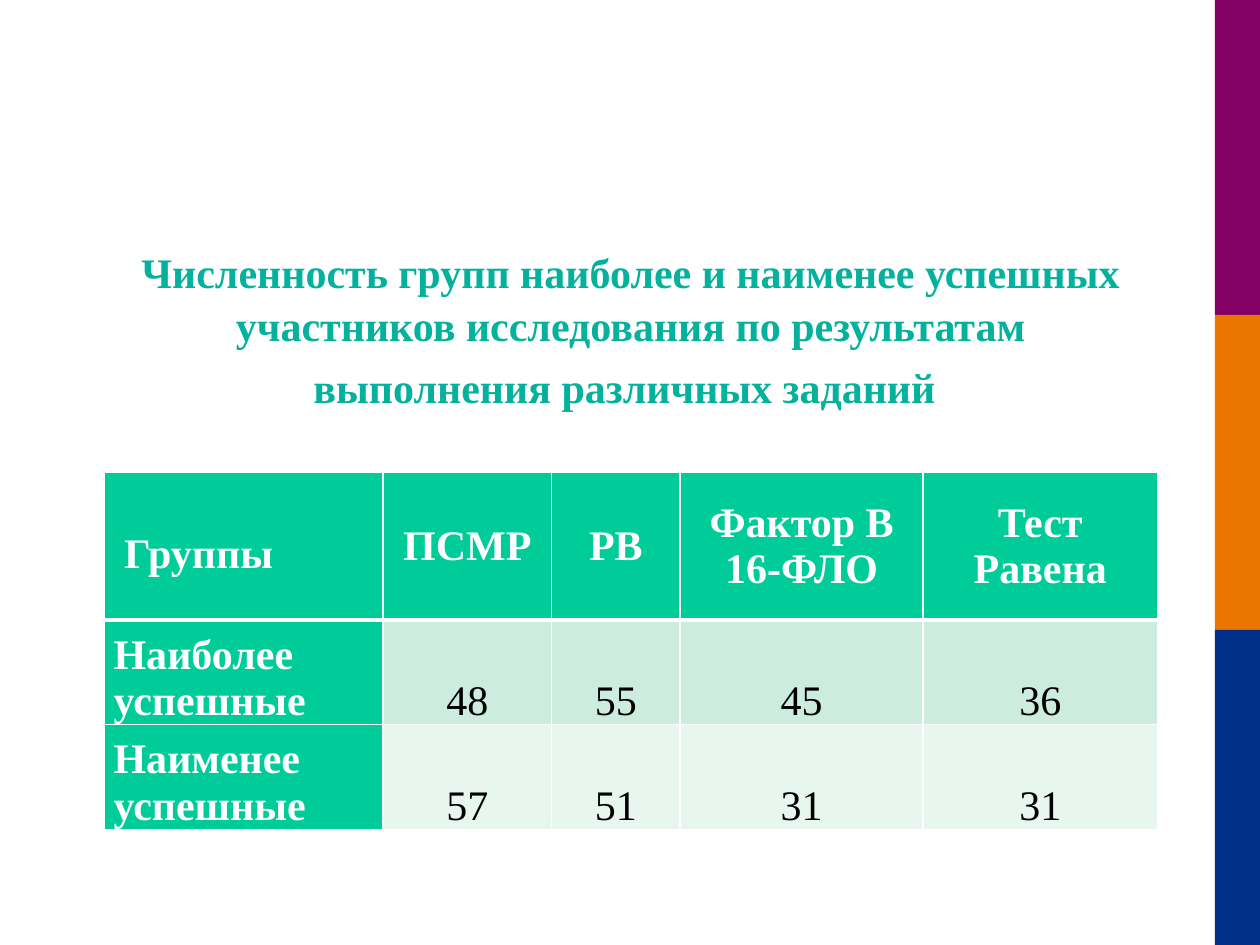
from dataclasses import dataclass

from lxml import etree
from pptx import Presentation
from pptx import util as u
from pptx.dml.color import RGBColor
from pptx.enum import shapes, text
from pptx.oxml import ns


@dataclass(frozen=True)
class Theme:
    font: str = "Times New Roman"
    size: int = 24
    tail_size: int = 28
    white: str = "FFFFFF"
    black: str = "000000"
    title: str = "03B19C"
    title_tail: str = "02A082"
    header: str = "00CC99"
    rows: tuple = ("CBECDE", "E7F6EF")
    bands: tuple = ("830065", "EA7600", "003087")


THEME = Theme()
TITLE = "Численность групп наиболее и наименее успешных участников исследования по результатам выполнения различных заданий"
GROUPS = [
    ["Группы", "ПCМР", "РВ", "Фактор В 16-ФЛО", "Тест Равена"],
    ["Наиболее успешные", "48", "55", "45", "36"],
    ["Наименее успешные", "57", "51", "31", "31"],
]
COL_WIDTHS = [5.61, 3.4, 2.59, 4.9, 4.72]
ROW_HEIGHTS = [2.97, 2.11, 2.11]


def fill(obj, color):
    obj.fill.solid()
    obj.fill.fore_color.rgb = RGBColor.from_string(color)


def style(r, color, bold=True, size=THEME.size):
    f = r.font
    f.name, f.size, f.bold = THEME.font, u.Pt(size), bold
    f.color.rgb = RGBColor.from_string(color)


def set_borders(cell, **widths):
    """Draw white borders; widths in points, keyed by side: L, R, T, B."""
    tcPr = cell._tc.get_or_add_tcPr()
    for i, (side, width) in enumerate(widths.items()):
        ln = etree.Element(ns.qn(f"a:ln{side}"), w=str(u.Pt(width)))
        solid = etree.SubElement(ln, ns.qn("a:solidFill"))
        etree.SubElement(solid, ns.qn("a:srgbClr"), val=THEME.white)
        tcPr.insert(i, ln)


def add_side_bands(s, left, top, width, height):
    band = height / len(THEME.bands)
    for i, color in enumerate(THEME.bands):
        sp = s.shapes.add_shape(
            shapes.MSO_SHAPE.RECTANGLE,
            u.Cm(left), u.Cm(top + i * band), u.Cm(width), u.Cm(band))
        sp.shadow.inherit = False
        fill(sp, color)
        sp.line.fill.background()


def add_title(s, left, top, width, height):
    sp = s.shapes.title
    sp.left, sp.top, sp.width, sp.height = map(u.Cm, (left, top, width, height))
    sp.line.color.rgb = RGBColor.from_string(THEME.white)
    sp.line.width = u.Pt(0.75)
    tf = sp.text_frame
    tf.word_wrap, tf.auto_size = True, text.MSO_AUTO_SIZE.NONE
    tf.vertical_anchor = text.MSO_ANCHOR.BOTTOM
    tf.margin_left = 0
    tf.text = TITLE
    p = tf.paragraphs[0]
    p.alignment, p.line_spacing = text.PP_ALIGN.CENTER, 1.07
    style(p.runs[0], THEME.title)
    tail = p.add_run()
    tail.text = " "
    style(tail, THEME.title_tail, size=THEME.tail_size)


def format_cell(cell, row, col):
    is_header, is_label = row == 0, col == 0
    strong = is_header or is_label
    fill(cell, THEME.header if strong else THEME.rows[row - 1])
    cell.margin_left = cell.margin_right = u.Cm(0.18)
    cell.margin_top = cell.margin_bottom = 0
    centred = is_header and not is_label
    cell.vertical_anchor = text.MSO_ANCHOR.MIDDLE if centred else text.MSO_ANCHOR.BOTTOM
    p = cell.text_frame.paragraphs[0]
    p.alignment = text.PP_ALIGN.LEFT if is_label else text.PP_ALIGN.CENTER
    style(p.runs[0], THEME.white if strong else THEME.black, bold=strong)
    set_borders(cell, L=1, R=1, T=3 if row == 1 else 1, B=3 if is_header else 1)


def add_group_table(s, left, top):
    frame = s.shapes.add_table(
        len(ROW_HEIGHTS), len(COL_WIDTHS), u.Cm(left), u.Cm(top),
        u.Cm(sum(COL_WIDTHS)), u.Cm(sum(ROW_HEIGHTS)))
    table = frame.table
    for column, width in zip(table.columns, COL_WIDTHS):
        column.width = u.Cm(width)
    for i, height in enumerate(ROW_HEIGHTS):
        table.rows[i].height = u.Cm(height)
        for j, value in enumerate(GROUPS[i]):
            cell = table.cell(i, j)
            cell.text = value
            format_cell(cell, i, j)
    corner = table.cell(0, 0)
    corner.margin_left, corner.margin_bottom = u.Cm(0.39), u.Cm(0.85)


def main():
    prs = Presentation()
    prs.slide_width, prs.slide_height = u.Cm(25.4), u.Cm(19.05)
    s = prs.slides.add_slide(prs.slide_layouts[5])
    add_side_bands(s, 24.49, 0, 0.91, 19.05)
    add_title(s, 2.49, 4.52, 20.7, 3.94)
    add_group_table(s, 2.11, 9.53)
    prs.save("out.pptx")


if __name__ == "__main__":
    main()
